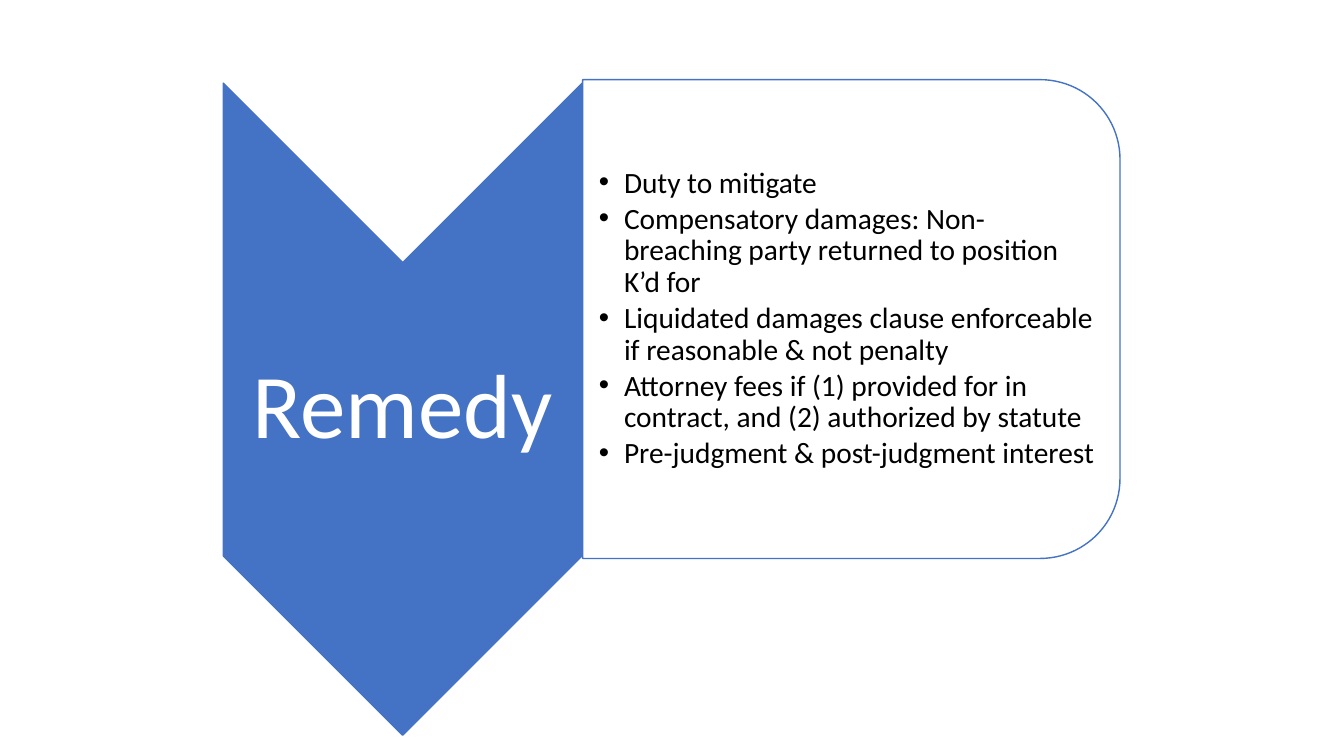
"""Build a slide with a downward Remedy chevron and a panel of contract remedies."""
from dataclasses import dataclass

from lxml.etree import SubElement
from pptx import Presentation
from pptx.dml.color import RGBColor
from pptx.enum.shapes import MSO_SHAPE
from pptx.enum.text import MSO_ANCHOR, MSO_AUTO_SIZE, PP_ALIGN
from pptx.oxml.ns import qn
from pptx.util import Pt

BLUE, WHITE, BLACK = "4472C4", "FFFFFF", "000000"
REMEDIES = (
    "Duty to mitigate",
    "Compensatory damages: Non-breaching party returned to position K’d for",
    "Liquidated damages clause enforceable if reasonable & not penalty",
    "Attorney fees if (1) provided for in contract, and (2) authorized by statute",
    "Pre-judgment & post-judgment interest",
)


@dataclass(frozen=True)
class Box:
    left: float
    top: float
    width: float
    height: float


@dataclass(frozen=True)
class TurnedShape:
    preset: MSO_SHAPE
    visible: Box
    fill: str
    opacity: int = 100


@dataclass(frozen=True)
class TextStyle:
    size: float
    color: str
    align: PP_ALIGN
    space_after: float
    indent: float = 0


TURNED_SHAPES = (
    TurnedShape(MSO_SHAPE.CHEVRON, Box(159.5, 59.4, 256.3, 465.8), BLUE),
    TurnedShape(MSO_SHAPE.ROUND_2_SAME_RECTANGLE, Box(416.2, 56.9, 383.8, 342), WHITE, 90),
)


def paint(color_format, color: str) -> None:
    color_format.rgb = RGBColor.from_string(color)


def draw_turned(slide, turned: TurnedShape):
    box = turned.visible
    shift = (box.width - box.height) / 2
    shape = slide.shapes.add_shape(
        turned.preset, Pt(box.left + shift), Pt(box.top - shift), Pt(box.height), Pt(box.width)
    )
    shape.rotation = 90
    shape.shadow.inherit = False
    shape.fill.solid()
    paint(shape.fill.fore_color, turned.fill)
    if turned.opacity < 100:
        color = shape.element.spPr.find(qn("a:solidFill"))[0]
        SubElement(color, qn("a:alpha"), val=str(turned.opacity * 1000))
    paint(shape.line.color, BLUE)
    shape.line.width = Pt(1)
    return shape


def fill_placeholder(holder, box: Box, inset: float, left_inset: float,
                     lines: tuple[str, ...], style: TextStyle) -> None:
    holder.left, holder.top = Pt(box.left), Pt(box.top)
    holder.width, holder.height = Pt(box.width), Pt(box.height)
    frame = holder.text_frame
    frame.text = "\n".join(lines)
    frame.word_wrap = True
    frame.auto_size = MSO_AUTO_SIZE.NONE
    frame.vertical_anchor = MSO_ANCHOR.MIDDLE
    frame.margin_left = Pt(left_inset)
    frame.margin_top = frame.margin_right = frame.margin_bottom = Pt(inset)
    for paragraph in frame.paragraphs:
        paragraph.alignment = style.align
        paragraph.line_spacing = 0.9
        paragraph.space_before = Pt(0)
        paragraph.space_after = Pt(style.space_after)
        paragraph.font.name = "Calibri"
        paragraph.font.size = Pt(style.size)
        paint(paragraph.font.color, style.color)
        if style.indent:
            properties = paragraph._p.get_or_add_pPr()
            properties.set("marL", str(Pt(style.indent)))
            properties.set("indent", str(-Pt(style.indent)))
            SubElement(properties, qn("a:buChar"), char="•") if properties.find(
                qn("a:defRPr")) is None else properties.find(
                qn("a:defRPr")).addprevious(properties.makeelement(qn("a:buChar"), char="•"))


def main() -> None:
    presentation = Presentation()
    presentation.slide_width, presentation.slide_height = Pt(960), Pt(540)
    slide = presentation.slides.add_slide(presentation.slide_layouts[1])
    heading, remedies = slide.placeholders
    for turned in TURNED_SHAPES:
        heading.element.addprevious(draw_turned(slide, turned).element)
    fill_placeholder(heading, Box(159.8, 187.2, 256.3, 210.2), 3.6, 3.6, ("Remedy",),
                     TextStyle(65, WHITE, PP_ALIGN.CENTER, 0))
    fill_placeholder(remedies, Box(416.2, 73.4, 367.2, 308.9), 0.7, 11.5, REMEDIES,
                     TextStyle(21, BLACK, PP_ALIGN.LEFT, 3, 18))
    presentation.save("out.pptx")


if __name__ == "__main__":
    main()
